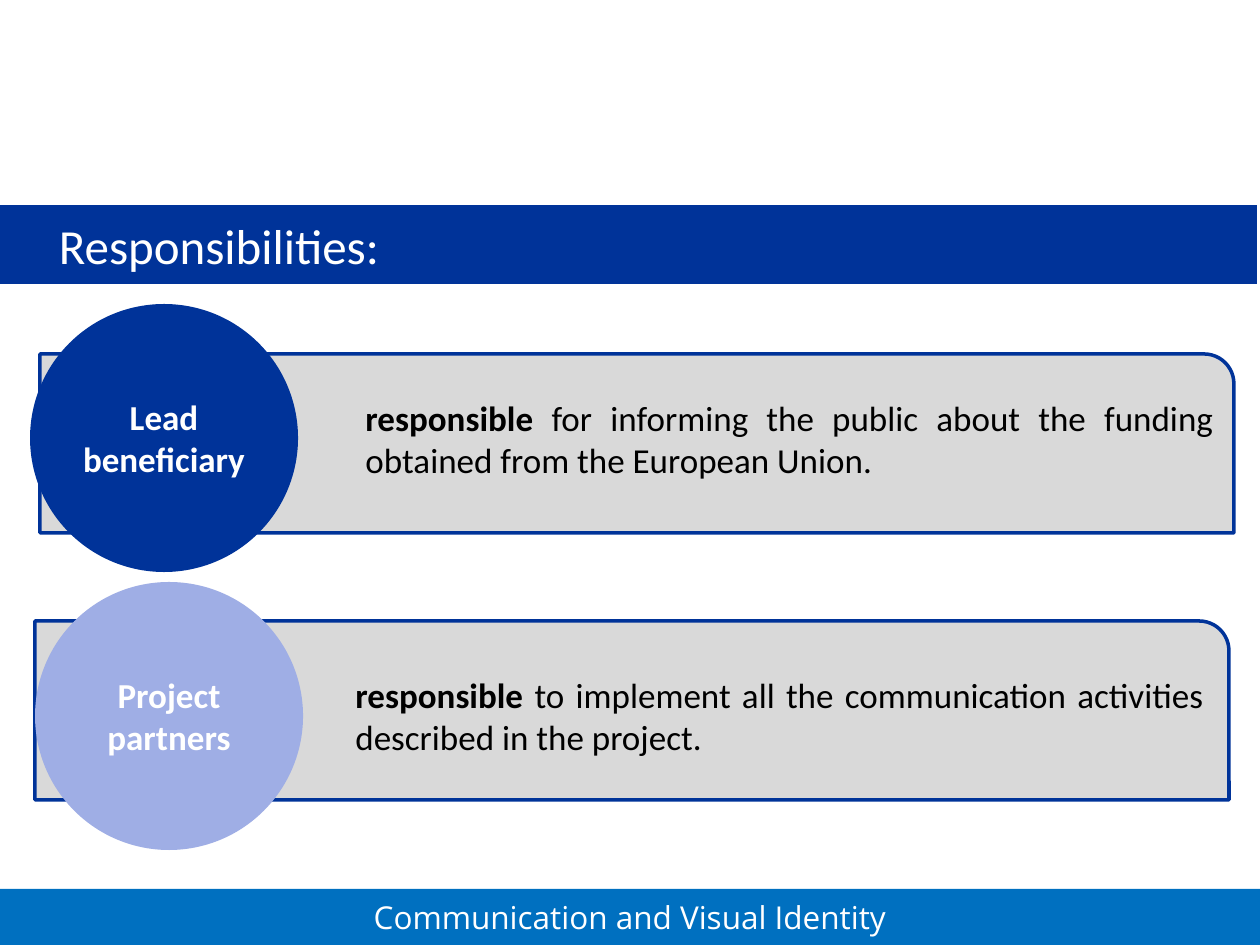
from pptx import Presentation
from pptx.dml.color import RGBColor
from pptx.enum.shapes import MSO_SHAPE
from pptx.enum.text import MSO_ANCHOR, PP_ALIGN
from pptx.util import Emu, Pt

RECTANGLE, OVAL = MSO_SHAPE.RECTANGLE, MSO_SHAPE.OVAL
ROUNDED_CORNER = MSO_SHAPE.ROUND_1_RECTANGLE
MIDDLE = MSO_ANCHOR.MIDDLE
LEFT, CENTER, JUSTIFY = PP_ALIGN.LEFT, PP_ALIGN.CENTER, PP_ALIGN.JUSTIFY

EMU_PER_PX = 914400 / 126
COLORS = {
    "navy": "003399",
    "lavender": "9FAEE5",
    "footer": "0070C0",
    "grey": "D9D9D9",
    "white": "FFFFFF",
    "black": "000000",
}


def add_block(kind, bounds, fill, line=None):
    """Add a filled shape, or a text box when kind is None."""
    lengths = [Emu(round(value * EMU_PER_PX)) for value in bounds]
    if kind is None:
        return page.shapes.add_textbox(*lengths)
    block = page.shapes.add_shape(kind, *lengths)
    block.shadow.inherit = False
    block.fill.solid()
    block.fill.fore_color.rgb = RGBColor.from_string(COLORS[fill])
    if line:
        block.line.color.rgb = RGBColor.from_string(COLORS[line])
        block.line.width = Pt(2)
    else:
        block.line.fill.background()
    return block


def write(block, text, size, color, align, font="Calibri", bold=False):
    """Set the block's single paragraph and return it."""
    frame = block.text_frame
    frame.word_wrap = True
    frame.vertical_anchor = MIDDLE
    para = frame.paragraphs[0]
    para.text = text
    para.alignment = align
    para.font.name = font
    para.font.size = Pt(size)
    para.font.color.rgb = RGBColor.from_string(COLORS[color])
    if bold:
        para.font.bold = True
    return para


deck = Presentation()
deck.slide_width = Emu(round(1260 * EMU_PER_PX))
deck.slide_height = Emu(round(945 * EMU_PER_PX))
page = deck.slides.add_slide(deck.slide_layouts[6])

# Footer band
footer = add_block(RECTANGLE, (0, 889, 1260, 56), "footer")
write(footer, "Communication and Visual Identity", 18, "white", CENTER, "Open Sans")

# Title band
title = add_block(RECTANGLE, (-3, 205, 1260, 79), "navy")
title.text_frame.margin_left = Emu(round(62 * EMU_PER_PX))
write(title, "Responsibilities:", 28, "white", LEFT)

# Roles: bar and circle corners, then text left, top and height
roles = [
    ("Lead beneficiary", "navy", (40, 354), (30, 304), (353, 344, 189),
     "for informing the public about the funding obtained from the European Union."),
    ("Project partners", "lavender", (35, 621), (35, 582), (343, 631, 169),
     "to implement all the communication activities described in the project."),
]
for role, color, bar_corner, circle_corner, (left, top, height), duty in roles:
    add_block(ROUNDED_CORNER, (*bar_corner, 1194, 179), "grey", "navy")

    circle = add_block(OVAL, (*circle_corner, 268, 268), color)
    write(circle, role, 20, "white", CENTER, bold=True)

    box = add_block(None, (left, top, 873, height), None)
    para = write(box, "responsible ", 20, "black", JUSTIFY)
    para.runs[0].font.bold = True
    span = para.add_run()
    span.text = duty

deck.save("out.pptx")
